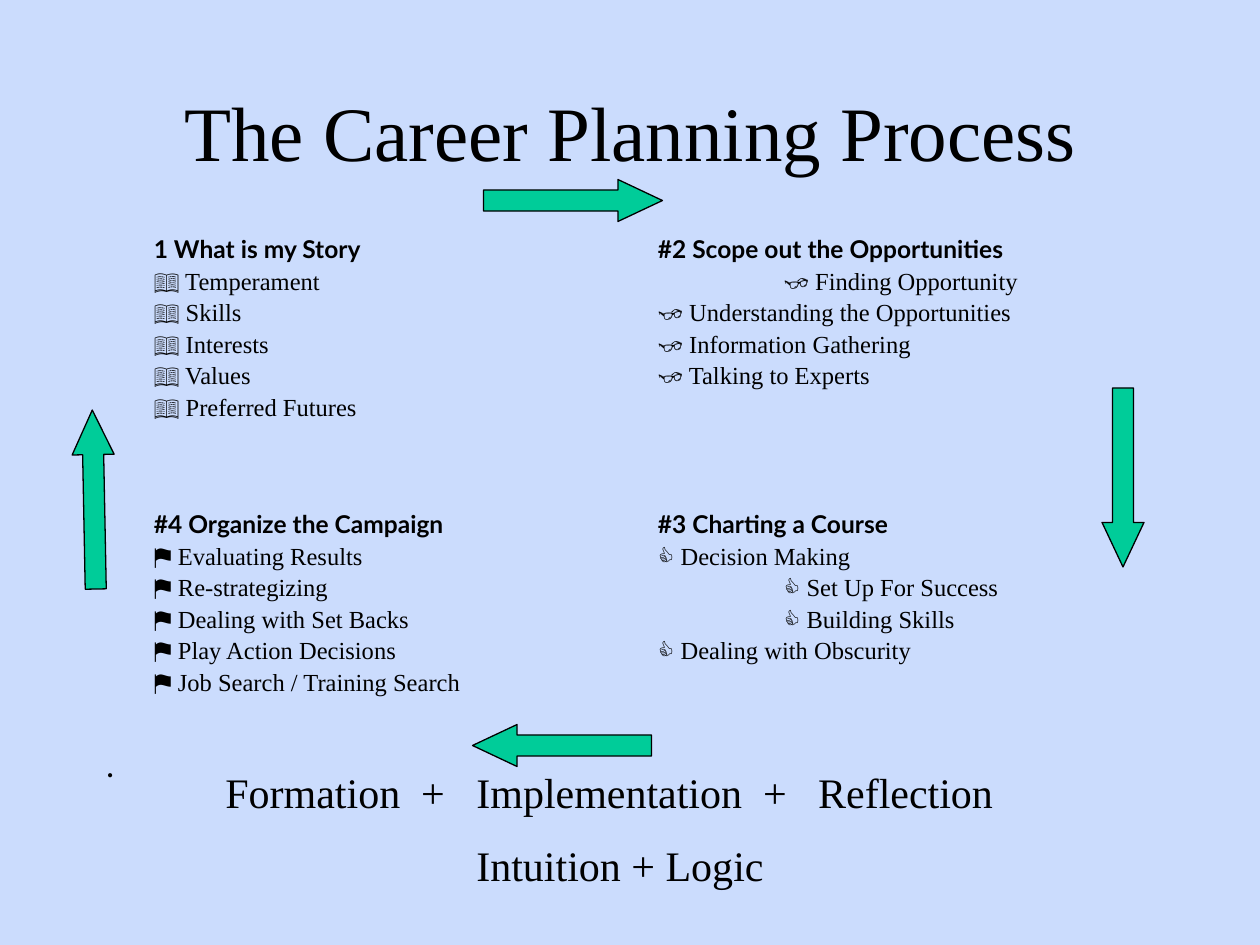
import dataclasses

import pptx
import pptx.dml.color
import pptx.enum.shapes
import pptx.enum.text
import pptx.util

PX = 914400 / 126
SERIF = "Times New Roman"
INK = "000000"
LEFT_COLUMN, RIGHT_COLUMN = 154, 658
TOP_ROW, BOTTOM_ROW = 232, 507
LINE_PITCH = 18
INDENT = 126
CENTER = pptx.enum.text.PP_ALIGN.CENTER


@dataclasses.dataclass
class Stage:
    left: int
    top: int
    heading: str
    symbol: str
    items: list[str]
    indented: tuple[int, ...] = ()


@dataclasses.dataclass
class Arrow:
    left: int
    top: int
    rotation: float


STAGES = [
    Stage(LEFT_COLUMN, TOP_ROW, "1 What is my Story", "📖",
          ["Temperament", "Skills", "Interests", "Values", "Preferred Futures"]),
    Stage(RIGHT_COLUMN, TOP_ROW, "#2 Scope out the Opportunities", "👓",
          ["Finding Opportunity", "Understanding the Opportunities",
           "Information Gathering", "Talking to Experts"], indented=(1,)),
    Stage(RIGHT_COLUMN, BOTTOM_ROW, "#3 Charting a Course", "👍",
          ["Decision Making", "Set Up For Success", "Building Skills",
           "Dealing with Obscurity"], indented=(2, 3)),
    Stage(LEFT_COLUMN, BOTTOM_ROW, "#4 Organize the Campaign", "⚑",
          ["Evaluating Results", "Re-strategizing", "Dealing with Set Backs",
           "Play Action Decisions", "Job Search / Training Search"]),
]
ARROWS = [Arrow(552, 111, 270), Arrow(1102, 388, 0),
          Arrow(541, 656, 90), Arrow(73, 410, 178.9)]


def px(length: int) -> int:
    return round(length * PX)


def color(value: str) -> pptx.dml.color.RGBColor:
    return pptx.dml.color.RGBColor.from_string(value)


def add_text(page, left: int, top: int, width: int, height: int,
             lines: list[str], size: int, align=None):
    """Add a text box without insets, one paragraph per line."""
    box = page.shapes.add_textbox(px(left), px(top), px(width), px(height))
    frame = box.text_frame
    frame.word_wrap = True
    frame.margin_left = frame.margin_right = 0
    frame.margin_top = frame.margin_bottom = 0
    frame.text = "\n".join(lines)
    for para in frame.paragraphs:
        para.alignment = align
        for span in para.runs:
            span.font.name = SERIF
            span.font.size = pptx.util.Pt(size)
            span.font.color.rgb = color(INK)
    return frame


def add_stage(page, stage: Stage) -> None:
    lines = [stage.heading] + [f"{stage.symbol} {item}" for item in stage.items]
    frame = add_text(page, stage.left, stage.top, 480, 32 * len(lines), lines, 14)
    for number, para in enumerate(frame.paragraphs):
        para.line_spacing = pptx.util.Pt(LINE_PITCH)
        if number in stage.indented:
            para._p.get_or_add_pPr().set("marL", str(px(INDENT)))
    heading = frame.paragraphs[0].runs[0]
    heading.font.name = "Lato"
    heading.font.bold = True


def add_arrow(page, arrow: Arrow) -> None:
    shape = page.shapes.add_shape(pptx.enum.shapes.MSO_SHAPE.DOWN_ARROW,
                                  px(arrow.left), px(arrow.top), px(42), px(179))
    shape.adjustments[0] = 0.5
    shape.adjustments[1] = 1.06
    shape.rotation = arrow.rotation
    shape.shadow.inherit = False
    shape.fill.solid()
    shape.fill.fore_color.rgb = color("00CC99")
    shape.line.color.rgb = color(INK)
    shape.line.width = pptx.util.Pt(0.75)


def main() -> None:
    deck = pptx.Presentation()
    deck.slide_width, deck.slide_height = px(1260), px(945)
    page = deck.slides.add_slide(deck.slide_layouts[6])
    page.background.fill.solid()
    page.background.fill.fore_color.rgb = color("CBDCFD")

    # Title
    title = add_text(page, 95, 63, 1071, 136,
                     ["The Career Planning Process"], 44, CENTER)
    title.vertical_anchor = pptx.enum.text.MSO_ANCHOR.MIDDLE

    # Four stages and the cycle around them
    for stage in STAGES:
        add_stage(page, stage)
    for arrow in ARROWS:
        add_arrow(page, arrow)

    # Closing lines and the lone bullet
    add_text(page, 107, 764, 20, 20, ["•"], 10)
    closing = add_text(page, 95, 766, 1050, 120,
                       ["Formation  +   Implementation  +   Reflection  ",
                        "Intuition + Logic"], 24, CENTER)
    closing.paragraphs[1].space_before = pptx.util.Pt(13)

    deck.save("out.pptx")


if __name__ == "__main__":
    main()
